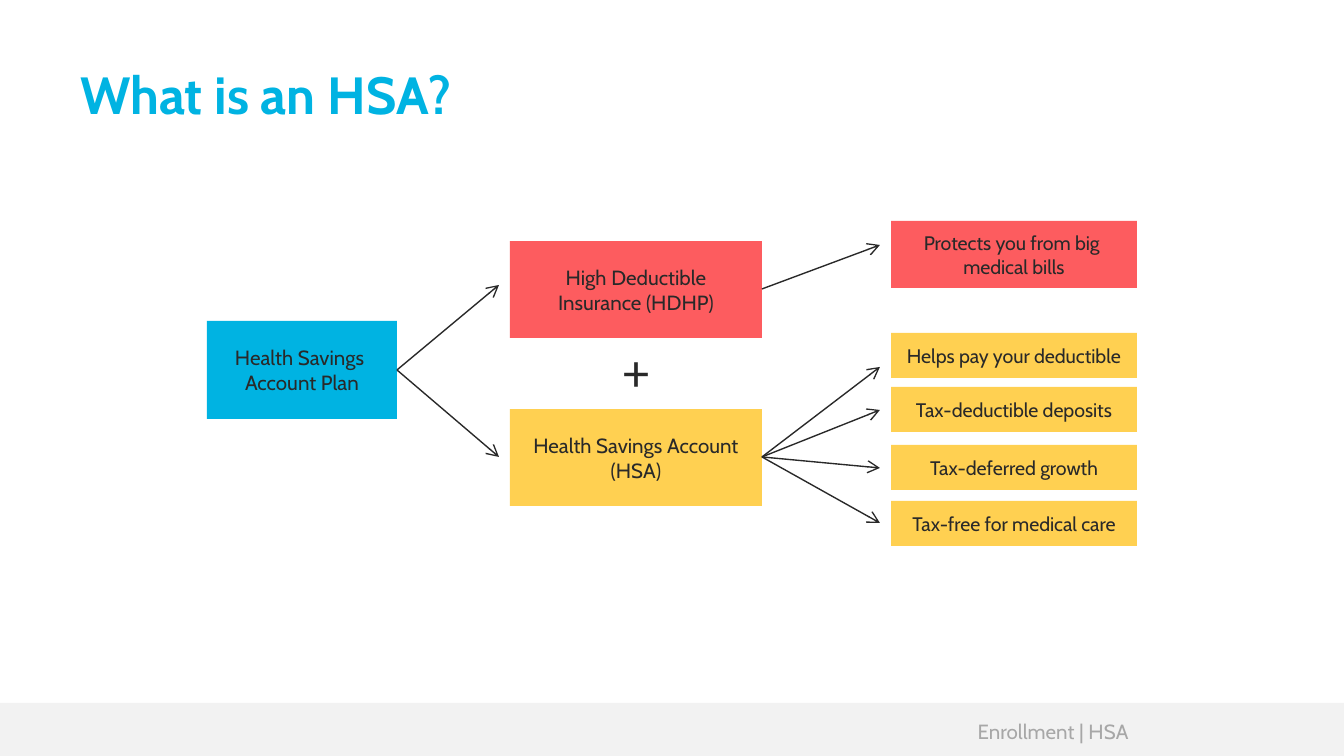
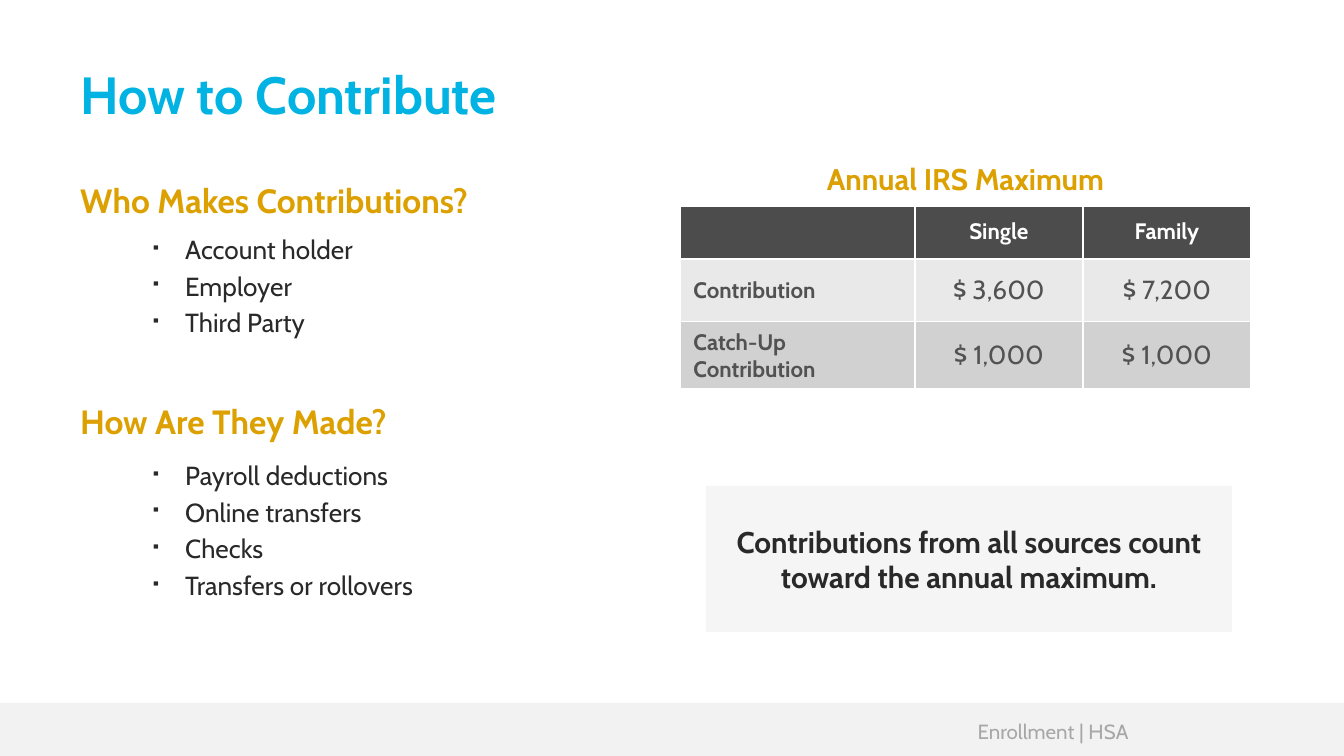
from lxml.etree import SubElement
from pptx import Presentation
from pptx.dml.color import RGBColor
from pptx.enum.shapes import MSO_CONNECTOR, MSO_SHAPE
from pptx.enum.text import MSO_ANCHOR, PP_ALIGN
from pptx.oxml.ns import qn
from pptx.util import Emu, Pt

PX = 914400 / 134.4
SLIDE_W, SLIDE_H = 1344, 756
FONT = "Cabin"

BLUE = RGBColor(0x00, 0xB3, 0xE2)
RED = RGBColor(0xFD, 0x5C, 0x5F)
YELLOW = RGBColor(0xFF, 0xD0, 0x51)
GOLD = RGBColor(0xDC, 0xA0, 0x00)
INK = RGBColor(0x29, 0x29, 0x29)
WHITE = RGBColor(0xFF, 0xFF, 0xFF)
BAND = RGBColor(0xF2, 0xF2, 0xF2)
FOOTER_GRAY = RGBColor(0xA7, 0xA7, 0xA7)
CALLOUT_GRAY = RGBColor(0xF5, 0xF5, 0xF5)
HEADER_GRAY = RGBColor(0x4C, 0x4C, 0x4D)
CELL_INK = RGBColor(0x52, 0x52, 0x52)
ROW_GRAYS = [RGBColor(0xE9, 0xE9, 0xE9), RGBColor(0xD1, 0xD1, 0xD1)]

FOOTER = "Enrollment | HSA"

# Slide 1: each box is (lines, left, top, width, height, fill)
PLAN = (["Health Savings ", "Account Plan"], 207, 321, 190, 98, BLUE)
INSURANCE = (["High Deductible Insurance (HDHP)"], 510, 241, 252, 97, RED)
ACCOUNT = (["Health Savings Account (HSA)"], 510, 409, 252, 97, YELLOW)
BENEFIT_LEFT, BENEFIT_W = 891, 246
# (source, lines, top, height, y of the arrowhead)
BENEFITS = [
    (INSURANCE, ["Protects you from big ", "medical bills"], 221, 67, 245),
    (ACCOUNT, ["Helps pay your deductible"], 333, 45, 367),
    (ACCOUNT, ["Tax-deductible deposits"], 387, 45, 410),
    (ACCOUNT, ["Tax-deferred growth"], 445, 45, 468),
    (ACCOUNT, ["Tax-free for medical care"], 501, 45, 523),
]
PLAN_ARROWS = [(INSURANCE, 285), (ACCOUNT, 457)]
ARROW_GAP = 11

# Slide 2: (heading, heading box, anchor, list top, items)
SECTIONS = [
    ("Who Makes Contributions?", (67, 173, 460, 70), MSO_ANCHOR.TOP, 227,
     ["Account holder", "Employer", "Third Party"]),
    ("How Are They Made?", (67, 378, 414, 70), MSO_ANCHOR.BOTTOM, 453,
     ["Payroll deductions", "Online transfers", "Checks", "Transfers or rollovers"]),
]
CALLOUT = "Contributions from all sources count toward the annual maximum."
LIMITS_TITLE = "Annual IRS Maximum"
LIMITS_HEADER = ["", "Single", "Family"]
LIMITS = [
    ["Contribution", "$ 3,600", "$ 7,200"],
    ["Catch-Up Contribution", "$ 1,000", "$ 1,000"],
]
COLUMN_WIDTHS = [235, 168, 168]
ROW_HEIGHTS = [50, 44, 63, 66]


def px(length):
    return Emu(round(length * PX))


def write(frame, lines, size, color=INK, bold=False, align=PP_ALIGN.LEFT,
          font=FONT, bulleted=False):
    for number, line in enumerate(lines):
        paragraph = frame.add_paragraph() if number else frame.paragraphs[0]
        paragraph.alignment = align
        if bulleted:
            add_bullet(paragraph)
            if number:
                paragraph.space_before = Pt(size * 0.2)
        run = paragraph.add_run()
        run.text = line
        run.font.name = font
        run.font.size = Pt(size)
        run.font.bold = bold
        run.font.color.rgb = color


def add_bullet(paragraph):
    properties = paragraph._p.get_or_add_pPr()
    properties.set("marL", str(px(83)))
    properties.set("indent", str(px(-34)))
    SubElement(properties, qn("a:buSzPct")).set("val", "50000")
    SubElement(properties, qn("a:buChar")).set("char", "▪")


def add_text(slide, place, lines, size, anchor=MSO_ANCHOR.MIDDLE, **style):
    frame = slide.shapes.add_textbox(*map(px, place)).text_frame
    frame.word_wrap = True
    frame.vertical_anchor = anchor
    write(frame, lines, size, **style)


def add_box(slide, place, fill, lines=(), size=11, bold=False):
    box = slide.shapes.add_shape(MSO_SHAPE.RECTANGLE, *map(px, place))
    box.shadow.inherit = False
    box.fill.solid()
    box.fill.fore_color.rgb = fill
    box.line.fill.background()
    box.text_frame.word_wrap = True
    box.text_frame.vertical_anchor = MSO_ANCHOR.MIDDLE
    write(box.text_frame, lines, size, bold=bold, align=PP_ALIGN.CENTER)


def add_arrow(slide, source, target_left, end_y):
    """Run from the middle of the source's right side to just before the target."""
    _, left, top, width, height, _ = source
    ends = (left + width, top + height // 2, target_left - ARROW_GAP, end_y)
    arrow = slide.shapes.add_connector(MSO_CONNECTOR.STRAIGHT, *map(px, ends))
    arrow.line.color.rgb = INK
    arrow.line.width = Pt(0.75)
    properties = arrow.element.spPr
    SubElement(properties.find(qn("a:ln")), qn("a:tailEnd")).set("type", "arrow")
    SubElement(properties, qn("a:effectLst"))


def start_slide(deck, title):
    slide = deck.slides.add_slide(deck.slide_layouts[6])
    add_box(slide, (0, 703, SLIDE_W, SLIDE_H - 703), BAND)
    add_text(slide, (67, 31, 1210, 126), [title], 28, color=BLUE, bold=True)
    add_text(slide, (392, 703, 750, 56), [FOOTER], 11, color=FOOTER_GRAY,
             align=PP_ALIGN.RIGHT)
    return slide


def fill_cell(cell, text, size, fill, color, bold, align, bottom=1):
    properties = cell._tc.get_or_add_tcPr()
    for side, width in (("lnL", 1), ("lnR", 1), ("lnT", 1), ("lnB", bottom)):
        border = SubElement(properties, qn(f"a:{side}"))
        border.set("w", str(Pt(width)))
        paint = SubElement(border, qn("a:solidFill"))
        SubElement(paint, qn("a:srgbClr")).set("val", str(WHITE))
    cell.fill.solid()
    cell.fill.fore_color.rgb = fill
    cell.vertical_anchor = MSO_ANCHOR.MIDDLE
    write(cell.text_frame, [text] if text else [], size, color, bold, align)


def add_limits(slide):
    table = slide.shapes.add_table(
        len(ROW_HEIGHTS), len(COLUMN_WIDTHS), px(680), px(155),
        px(sum(COLUMN_WIDTHS)), px(sum(ROW_HEIGHTS))).table
    table.first_row = table.horz_banding = False
    for column, width in zip(table.columns, COLUMN_WIDTHS):
        column.width = px(width)
    for row, height in zip(table.rows, ROW_HEIGHTS):
        row.height = px(height)

    table.cell(0, 0).merge(table.cell(0, 2))
    for column, text in enumerate([LIMITS_TITLE, "", ""]):
        fill_cell(table.cell(0, column), text, 16, WHITE, GOLD, True,
                  PP_ALIGN.CENTER, bottom=3)
    for column, text in enumerate(LIMITS_HEADER):
        fill_cell(table.cell(1, column), text, 12, HEADER_GRAY, WHITE, True,
                  PP_ALIGN.CENTER)
    for row, (values, gray) in enumerate(zip(LIMITS, ROW_GRAYS), start=2):
        for column, text in enumerate(values):
            label = column == 0
            fill_cell(table.cell(row, column), text, 12 if label else 14, gray,
                      CELL_INK, label, PP_ALIGN.LEFT if label else PP_ALIGN.CENTER)


def build_definition(deck):
    slide = start_slide(deck, "What is an HSA?")
    for lines, *place, fill in (PLAN, INSURANCE, ACCOUNT):
        add_box(slide, place, fill, lines)
    add_text(slide, (591, 337, 90, 67), ["+"], 28, align=PP_ALIGN.CENTER,
             font="Calibri")
    for target, end_y in PLAN_ARROWS:
        add_arrow(slide, PLAN, target[1], end_y)
    for source, lines, top, height, end_y in BENEFITS:
        add_box(slide, (BENEFIT_LEFT, top, BENEFIT_W, height), source[-1], lines, 10.5)
        add_arrow(slide, source, BENEFIT_LEFT, end_y)


def build_contributions(deck):
    slide = start_slide(deck, "How to Contribute")
    for heading, place, anchor, list_top, items in SECTIONS:
        add_text(slide, place, [heading], 18, anchor, color=GOLD, bold=True)
        add_text(slide, (89, list_top, 594, 183), items, 14, MSO_ANCHOR.TOP,
                 bulleted=True)
    add_limits(slide)
    add_box(slide, (706, 486, 526, 146), CALLOUT_GRAY, [CALLOUT], 16, bold=True)


def main():
    deck = Presentation()
    deck.slide_width, deck.slide_height = px(SLIDE_W), px(SLIDE_H)
    build_definition(deck)
    build_contributions(deck)
    deck.save("out.pptx")


if __name__ == "__main__":
    main()
